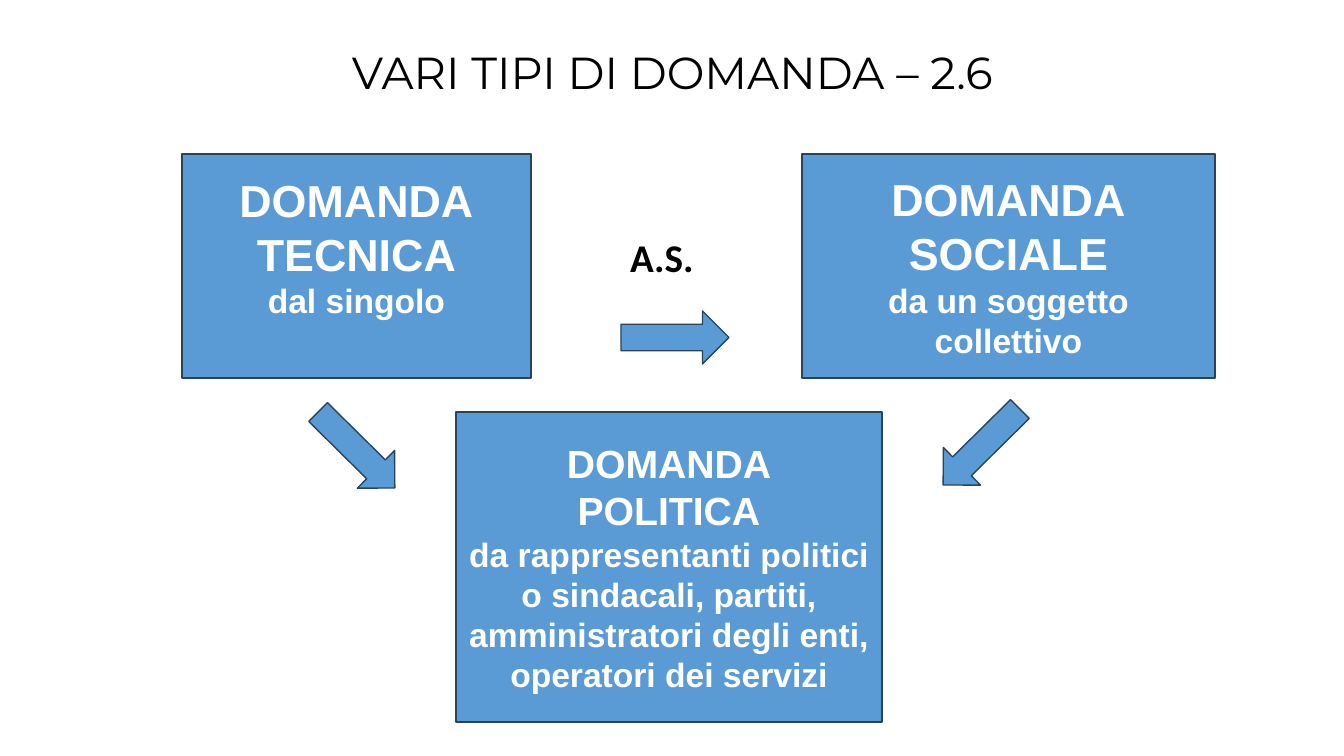
from pptx import Presentation
from pptx.dml.color import RGBColor
from pptx.enum.shapes import MSO_SHAPE
from pptx.enum.text import MSO_ANCHOR, PP_ALIGN
from pptx.util import Emu, Pt

SLIDE_W, SLIDE_H = 1344, 756
EMU_PER_PX = 12192000 / SLIDE_W
BLUE, NAVY, WHITE, BLACK = "5B9BD5", "28445D", "FFFFFF", "000000"


def px(n):
    return Emu(round(n * EMU_PER_PX))


def color(hex_code):
    return RGBColor.from_string(hex_code)


def write_lines(tf, lines, font, hex_code, bold):
    """Fill a text frame with centred (text, size) paragraphs."""
    tf.word_wrap = True
    tf.vertical_anchor = MSO_ANCHOR.MIDDLE
    for i, (text, size) in enumerate(lines):
        p = tf.paragraphs[0] if i == 0 else tf.add_paragraph()
        p.text = text
        p.alignment = PP_ALIGN.CENTER
        p.font.name = font
        p.font.size = Pt(size)
        p.font.bold = bold
        p.font.color.rgb = color(hex_code)


def add_label(s, box, text, font, size, bold=False):
    sp = s.shapes.add_textbox(*map(px, box))
    write_lines(sp.text_frame, [(text, size)], font, BLACK, bold)


def add_blue_shape(s, kind, box, rotation=0):
    sp = s.shapes.add_shape(kind, *map(px, box))
    sp.rotation = rotation
    sp.shadow.inherit = False
    sp.fill.solid()
    sp.fill.fore_color.rgb = color(BLUE)
    sp.line.color.rgb = color(NAVY)
    sp.line.width = Pt(1)
    return sp


def add_demand_box(s, box, heading, heading_size, details, bottom=5):
    sp = add_blue_shape(s, MSO_SHAPE.RECTANGLE, box)
    sp.text_frame.margin_bottom = px(bottom)
    lines = [(t, heading_size) for t in heading] + [(t, 24) for t in details]
    write_lines(sp.text_frame, lines, "Arial", WHITE, True)


def main():
    prs = Presentation()
    prs.slide_width, prs.slide_height = px(SLIDE_W), px(SLIDE_H)
    s = prs.slides.add_slide(prs.slide_layouts[6])

    # Title and centre label
    add_label(s, (93, 40, 1159, 63), "VARI TIPI DI DOMANDA – 2.6", "Montserrat", 32)
    add_label(s, (602, 227, 120, 60), "A.S.", "Calibri", 28, bold=True)

    # The three kinds of demand
    add_demand_box(s, (182, 154, 349, 224), ["DOMANDA", "TECNICA"], 32,
                   ["dal singolo"], bottom=44)
    add_demand_box(s, (802, 154, 413, 224), ["DOMANDA", "SOCIALE"], 32,
                   ["da un soggetto collettivo"])
    add_demand_box(s, (456, 412, 426, 310), ["DOMANDA", "POLITICA"], 28,
                   ["da rappresentanti politici",
                    "o sindacali, partiti, amministratori degli enti, operatori dei servizi"])

    # Arrows between them
    add_blue_shape(s, MSO_SHAPE.DOWN_ARROW, (330, 396, 53, 108), 314.7)
    add_blue_shape(s, MSO_SHAPE.DOWN_ARROW, (955, 393, 53, 108), 45.3)
    add_blue_shape(s, MSO_SHAPE.RIGHT_ARROW, (621, 311, 108, 53))

    prs.save("out.pptx")


if __name__ == "__main__":
    main()
